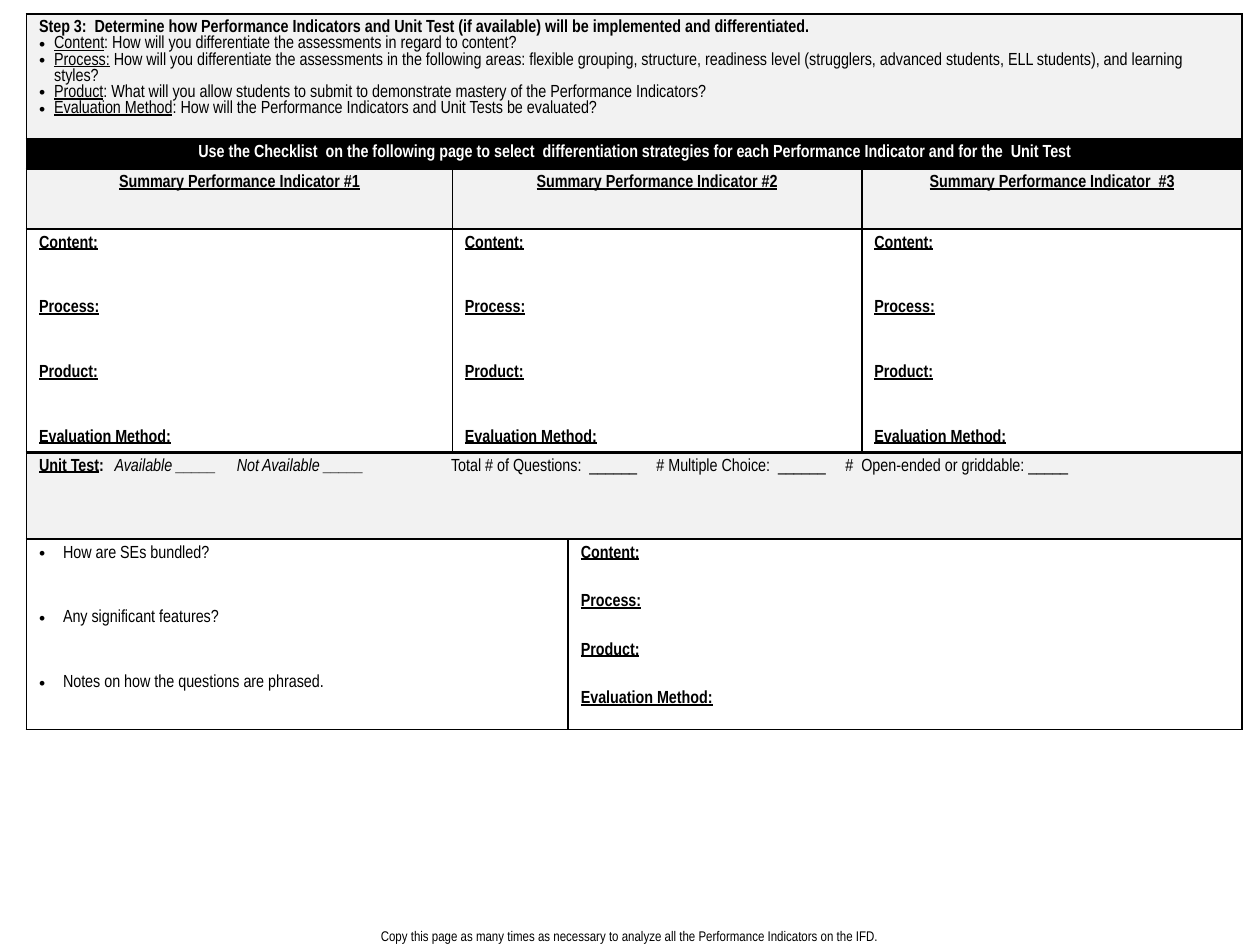
from lxml.etree import SubElement as Sub
from pptx import Presentation
from pptx.dml.color import RGBColor
from pptx.enum.text import MSO_AUTO_SIZE as Auto, PP_ALIGN as Align
from pptx.oxml import parse_xml
from pptx.oxml.ns import nsdecls, qn
from pptx.util import Inches, Pt

BLACK, WHITE, GREY = "000000", "FFFFFF", "F2F2F2"
LINE = 9.25  # height of one text line in points
PARTS = ["Content:", "Process:", "Product:", "Evaluation Method:"]


def color(code):
    return RGBColor.from_string(code)


class Page:
    font = "Arial Narrow"

    def __init__(self, slide):
        self.slide = slide

    def para(self, frame, runs, first, size=10, ink=BLACK, align=Align.LEFT,
             gap=0, dent=0, tabs=()):
        """Add a paragraph of (text, marks) runs; marks are letters of b, i, u."""
        p = frame.paragraphs[0] if first else frame.add_paragraph()
        p.alignment, p.line_spacing = align, 1.0
        p.space_before = Pt(0 if first else gap)
        props = p._p.get_or_add_pPr()
        if dent:
            props.set("marL", str(Inches(dent)))
            props.set("indent", str(-Inches(dent)))
            Sub(props, qn("a:buFont"), typeface="Arial")
            Sub(props, qn("a:buChar"), char="•")
        if tabs:
            stops = Sub(props, qn("a:tabLst"))
            for pos in tabs:
                Sub(stops, qn("a:tab"), pos=str(Inches(pos)), algn="l")
        for text, marks in runs:
            run = p.add_run()
            run.text = text
            font = run.font
            font.name, font.size = self.font, Pt(size)
            font.bold, font.italic = "b" in marks, "i" in marks
            font.underline = "u" in marks
            font.color.rgb = color(ink)

    def grid(self, left, top, cols, rows):
        shape = self.slide.shapes.add_table(
            len(rows), len(cols), Inches(left), Inches(top),
            Inches(sum(cols)), Inches(sum(rows)))
        table = shape.table
        table.first_row = table.horz_banding = False
        for col, width in zip(table.columns, cols):
            col.width = Inches(width)
        for row, height in zip(table.rows, rows):
            row.height = Inches(height)
        return table

    def paint(self, cell, fill, top=1, bottom=1):
        cell.fill.solid()
        cell.fill.fore_color.rgb = color(fill)
        props = cell._tc.get_or_add_tcPr()
        sides = [("L", 1), ("R", 1), ("T", top), ("B", bottom)]
        for spot, (side, width) in enumerate(sides):
            props.insert(spot, parse_xml(
                f'<a:ln{side} {nsdecls("a")} w="{Pt(width)}"><a:solidFill>'
                f'<a:srgbClr val="{BLACK}"/></a:solidFill></a:ln{side}>'))

    def fill(self, cell, paras, **style):
        for i, runs in enumerate(paras):
            self.para(cell.text_frame, runs, i == 0, **style)

    def note(self, box, text, size):
        shape = self.slide.shapes.add_textbox(*map(Inches, box))
        frame = shape.text_frame
        frame.word_wrap = True
        frame.auto_size = Auto.SHAPE_TO_FIT_TEXT
        self.para(frame, [(text, "")], True, size=size, align=Align.CENTER)


def main():
    deck = Presentation()
    deck.slide_width, deck.slide_height = Inches(10), Inches(7.5)
    page = Page(deck.slides.add_slide(deck.slide_layouts[6]))

    # Table frame, merged cells, fills and borders
    table = page.grid(0.21, 0.11, [3.38, 0.92, 2.33, 3.02],
                      [0.99, 0.24, 0.48, 1.77, 0.69, 1.51])
    cell = table.cell
    spans = [(0, 0, 3), (1, 0, 3), (2, 1, 2), (3, 1, 2),
             (4, 0, 3), (5, 0, 1), (5, 2, 3)]
    for row, start, end in spans:
        cell(row, start).merge(cell(row, end))
    for row, tint in enumerate([GREY, BLACK, GREY, WHITE, GREY, WHITE]):
        for col in range(4):
            page.paint(cell(row, col), tint, top=2.25 if row == 4 else 1,
                       bottom=2.25 if row == 3 else 1)

    # Step heading and its questions
    head = cell(0, 0)
    page.fill(head, [[("Step 3:  Determine how Performance Indicators and Unit Test "
                       "(if available) will be implemented and differentiated.", "b")]])
    asks = [
        ("Content", ": How will you differentiate the assessments in regard to content?"),
        ("Process:", " How will you differentiate the assessments in the following areas: "
         "flexible grouping, structure, readiness level (strugglers, advanced students, "
         "ELL students), and learning styles?"),
        ("Product", ": What will you allow students to submit to demonstrate mastery "
         "of the Performance Indicators?"),
        ("Evaluation Method", ": How will the Performance Indicators and Unit Tests "
         "be evaluated?"),
    ]
    for term, ask in asks:
        page.para(head.text_frame, [(term, "u"), (ask, "")], False, dent=0.12)

    # Checklist banner
    page.fill(cell(1, 0), [[("Use the Checklist  on the following page to select  "
                             "differentiation strategies for each Performance Indicator "
                             "and for the  Unit Test", "b")]],
              ink=WHITE, align=Align.CENTER)

    # Performance indicators
    parts = [[(part, "bu")] for part in PARTS]
    for col, mark in [(0, "#1"), (1, "#2"), (3, " #3")]:
        title = f"Summary Performance Indicator {mark}"
        page.fill(cell(2, col), [[(title, "bu")]], align=Align.CENTER)
        page.fill(cell(3, col), parts, gap=3 * LINE)

    # Unit test
    page.fill(cell(4, 0), [[
        ("Unit Test", "bu"), (":\t", "b"),
        ("Available _____\tNot Available _____\t", "i"),
        ("Total # of Questions:  ______\t# Multiple Choice:  ______\t"
         "#  Open-ended or griddable: _____", "")]],
        tabs=[0.6, 1.57, 3.27, 4.9, 6.4])
    notes = ["How are SEs bundled?", "Any significant features?",
             "Notes on how the questions are phrased."]
    page.fill(cell(5, 0), [[(note, "")] for note in notes],
              gap=3 * LINE, dent=0.19)
    page.fill(cell(5, 2), parts, gap=2 * LINE)

    # Footer
    page.note((0, 7.31, 10, 0.24), "Copy this page as many times as necessary to "
              "analyze all the Performance Indicators on the IFD.", 8)
    deck.save("out.pptx")


if __name__ == "__main__":
    main()
